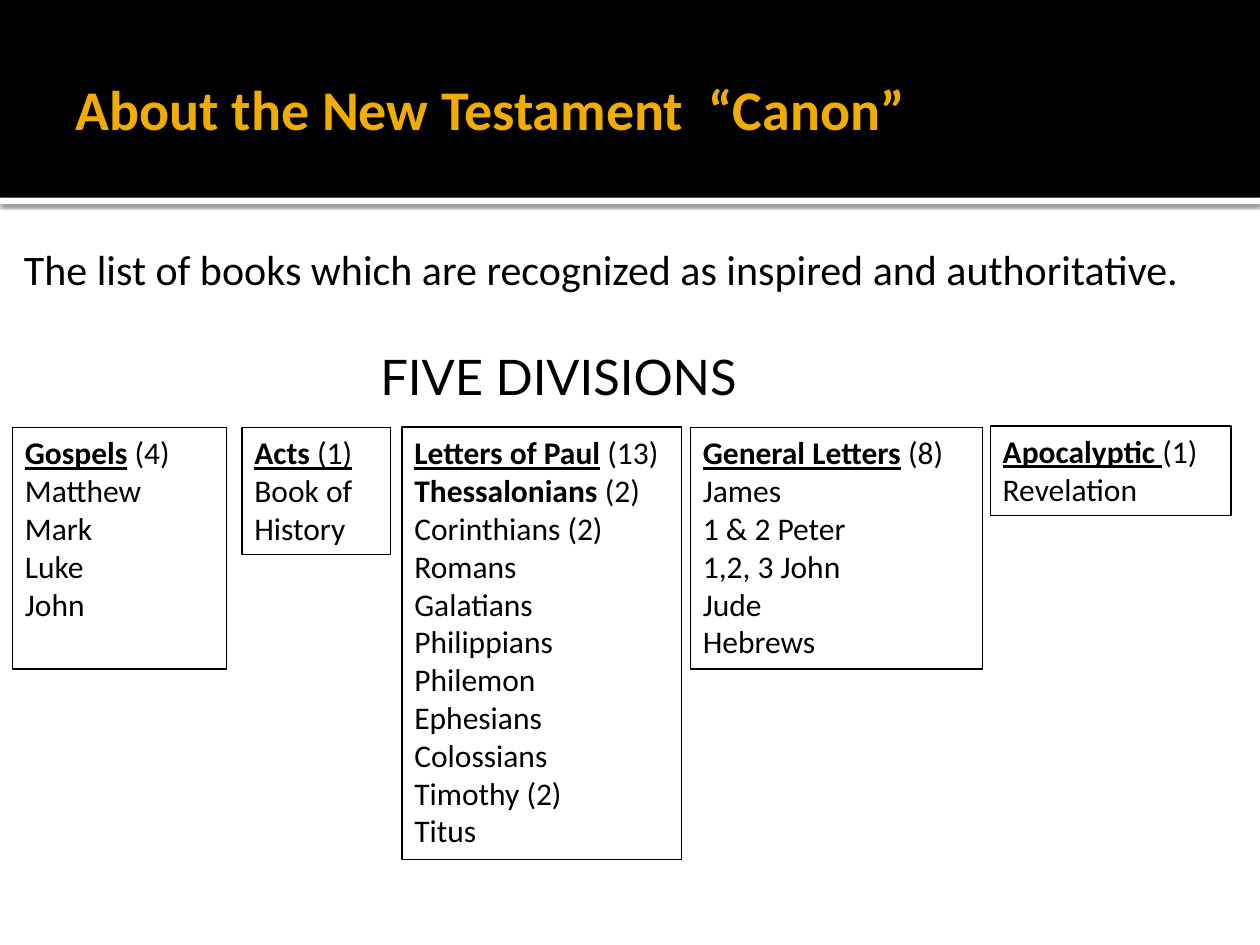
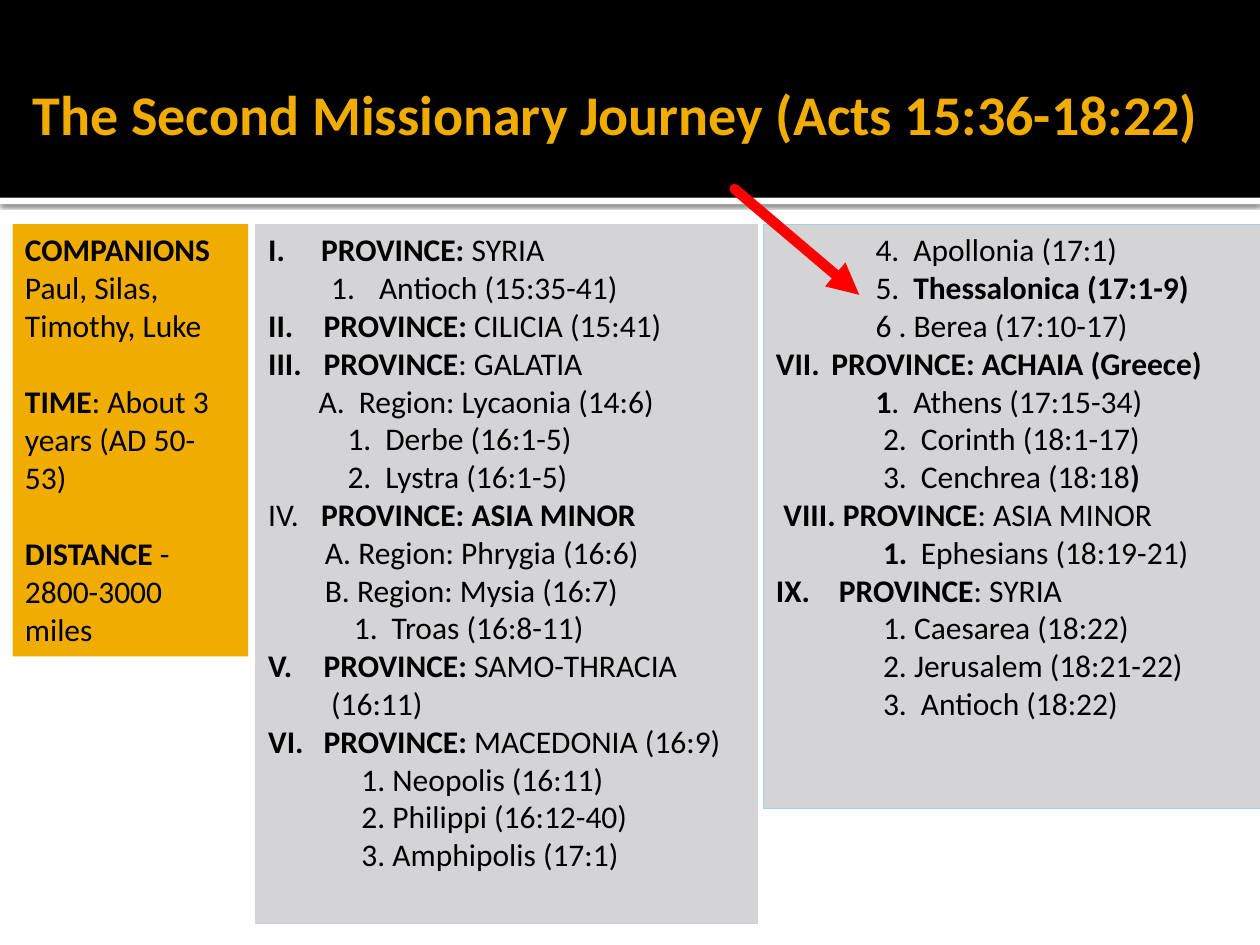
"""Builds two slides on the New Testament canon and the second missionary journey."""
from lxml import etree
from pptx import Presentation
from pptx.dml.color import RGBColor
from pptx.enum import shapes, text
from pptx.oxml import ns
from pptx.util import Inches, Pt

BLACK = RGBColor(0x00, 0x00, 0x00)
WHITE = RGBColor(0xFF, 0xFF, 0xFF)
GOLD = RGBColor(0xF0, 0xAD, 0x00)
GRAY = RGBColor(0xD4, 0xD4, 0xD6)
PALE_BLUE = RGBColor(0xA0, 0xD3, 0xE0)
RED = RGBColor(0xFF, 0x00, 0x00)
FONT = "Calibri"

# In all wording, * switches bold and _ switches underline.
CANON_TITLE = "About the New Testament  “Canon”"
CANON_INTRO = "The list of books which are recognized as inspired and authoritative."
DIVISIONS_HEADING = "FIVE DIVISIONS"
DIVISIONS = [
    ((0.1, 3.39, 1.7, 1.92), ["*_Gospels*_ (4)", "Matthew", "Mark", "Luke", "John"]),
    ((1.92, 3.39, 1.18, 1.01), ["*_Acts *(1)_", "Book of History"]),
    ((3.19, 3.39, 2.22, 3.43), [
        "*_Letters of Paul*_ (13)", "*Thessalonians *(2)", "Corinthians (2)",
        "Romans", "Galatians", "Philippians", "Philemon", "Ephesians",
        "Colossians", "Timothy (2)", "Titus"]),
    ((5.48, 3.39, 2.32, 1.92), [
        "*_General Letters*_ (8)", "James", "1 & 2 Peter", "1,2, 3 John",
        "Jude", "Hebrews"]),
    ((7.86, 3.38, 1.91, 0.71), ["*_Apocalyptic *_(1)", "Revelation"]),
]

JOURNEY_TITLE = "The Second Missionary Journey (Acts 15:36-18:22)"
FACTS = [
    "*COMPANIONS *Paul, Silas, Timothy, Luke",
    "*TIME*: About 3 years (AD 50-53)",
    "*DISTANCE* - 2800-3000 miles",
]
ROMAN, ARABIC = "romanUcPeriod", "arabicPeriod"
# Each stop: label indent, text indent, wording, optional (number style, start).
EARLY_STOPS = [
    (0, 0.42, "*I.\tPROVINCE: *SYRIA"),
    (0.5, 0.88, "Antioch (15:35-41)", (ARABIC, 1)),
    (0, 0.44, "*PROVINCE: *CILICIA (15:41)", (ROMAN, 2)),
    (0, 0.44, "*PROVINCE*: GALATIA", (ROMAN, 3)),
    (0.4, 0.72, "A.\tRegion: Lycaonia (14:6)"),
    (0.63, 0.93, "1.\tDerbe (16:1-5)"),
    (0.63, 0.93, "2.\tLystra (16:1-5)"),
    (0, 0.42, "IV.\t*PROVINCE: ASIA MINOR*"),
    (0.45, 0.45, "A. Region: Phrygia (16:6)"),
    (0.45, 0.45, "B. Region: Mysia (16:7)"),
    (0.68, 0.98, "1.\tTroas (16:8-11)"),
    (0, 0.44, "*PROVINCE: *SAMO-THRACIA", (ROMAN, 5)),
    (0.5, 0.5, "(16:11)"),
    (0, 0.44, "*PROVINCE:* MACEDONIA (16:9)", (ROMAN, 6)),
    (0.74, 0.74, "1. Neopolis (16:11)"),
    (0.74, 0.74, "2. Philippi (16:12-40)"),
    (0.74, 0.74, "3. Amphipolis (17:1)"),
]
LATE_STOPS = [
    (0.79, 1.09, "4.\tApollonia (17:1)"),
    (0.79, 1.09, "5.\t*Thessalonica (17:1-9)*"),
    (0.79, 0.79, "6 . Berea (17:10-17)"),
    (0, 0.44, "*PROVINCE: ACHAIA (Greece)*", (ROMAN, 7)),
    (0.79, 1.09, "*1*.\tAthens (17:15-34)"),
    (0.85, 1.15, "2.\tCorinth (18:1-17)"),
    (0.85, 1.15, "3.\tCenchrea (18:18*)*"),
    (0.06, 0.06, "*VIII. PROVINCE*: ASIA MINOR"),
    (0.85, 1.15, "*1.*\tEphesians (18:19-21)"),
    (0, 0.5, "*IX.\tPROVINCE*: SYRIA"),
    (0.85, 0.85, "1. Caesarea (18:22)"),
    (0.85, 0.85, "2. Jerusalem (18:21-22)"),
    (0.85, 1.15, "3.\tAntioch (18:22)"),
]
JOURNEY_PANELS = [
    ((6.06, 1.78, 3.95, 4.64), PALE_BLUE, LATE_STOPS),
    ((2.03, 1.78, 3.98, 5.55), GRAY, EARLY_STOPS),
]


def add_run(paragraph, wording, size, color, font=FONT, bold=False, underline=False):
    run = paragraph.add_run()
    run.text = wording
    run.font.name, run.font.size = font, Pt(size)
    run.font.bold, run.font.underline = bold, underline
    run.font.color.rgb = color


def add_marked_runs(paragraph, wording, size=18, color=BLACK):
    bold = underline = False
    for bold_index, bold_part in enumerate(wording.split("*")):
        bold = bold_index % 2 == 1
        for index, part in enumerate(bold_part.split("_")):
            if index:
                underline = not underline
            if part:
                add_run(paragraph, part, size, color, bold=bold, underline=underline)


def place(shape, box):
    shape.left, shape.top, shape.width, shape.height = map(Inches, box)


def set_indent(paragraph, label, wording_left, numbering=None):
    properties = paragraph._p.get_or_add_pPr()
    properties.set("marL", str(Inches(wording_left)))
    properties.set("indent", str(Inches(label - wording_left)))
    if numbering:
        style, start = numbering
        bullet = etree.SubElement(properties, ns.qn("a:buAutoNum"))
        bullet.set("type", style)
        bullet.set("startAt", str(start))
    else:
        etree.SubElement(properties, ns.qn("a:buNone"))


def add_box(parent, box, fill=None, line=None):
    shape = parent.add_shape(shapes.MSO_SHAPE.RECTANGLE, *map(Inches, box))
    shape.shadow.inherit = False
    if fill is None:
        shape.fill.background()
    else:
        shape.fill.solid()
        shape.fill.fore_color.rgb = fill
    if line is None:
        shape.line.fill.background()
    else:
        shape.line.color.rgb = line
        shape.line.width = Pt(0.75)
    shape.text_frame.word_wrap = True
    shape.text_frame.vertical_anchor = text.MSO_ANCHOR.TOP
    return shape


def next_paragraph(frame, index):
    paragraph = frame.add_paragraph() if index else frame.paragraphs[0]
    paragraph.alignment = text.PP_ALIGN.LEFT
    return paragraph


def fill_lines(frame, lines, gap=0):
    for index, wording in enumerate(lines):
        paragraph = next_paragraph(frame, index)
        paragraph.space_before = Pt(gap if index else 0)
        add_marked_runs(paragraph, wording)


def fill_stops(frame, stops):
    for index, (label, wording_left, wording, *numbering) in enumerate(stops):
        paragraph = next_paragraph(frame, index)
        set_indent(paragraph, label, wording_left, *numbering)
        add_marked_runs(paragraph, wording)


def add_shared_bands(presentation, slide):
    """Draws the header bands and moves them behind everything on the master."""
    strip = add_box(slide.shapes, (0, 1.57, 10, 0.05), WHITE)
    header = add_box(slide.shapes, (0, 0, 10, 1.57), BLACK)
    effects = strip._element.spPr.find(ns.qn("a:effectLst"))
    shadow = etree.SubElement(effects, ns.qn("a:outerShdw"), blurRad=str(Pt(2.5)),
                              dist=str(Pt(0.8)), dir="5400000", rotWithShape="0")
    color = etree.SubElement(shadow, ns.qn("a:srgbClr"), val=str(BLACK))
    etree.SubElement(color, ns.qn("a:alpha"), val="60000")
    tree = presentation.slide_master.shapes._spTree
    for position, band in enumerate((strip, header), start=2):
        tree.insert(position, band._element)


def set_title(slide, wording, box):
    title = slide.shapes.title
    place(title, box)
    frame = title.text_frame
    frame.margin_left, frame.margin_right = Inches(0.1), Inches(0.05)
    frame.vertical_anchor = text.MSO_ANCHOR.MIDDLE
    frame.auto_size = text.MSO_AUTO_SIZE.NONE
    add_run(next_paragraph(frame, 0), wording, 32, GOLD, bold=True)


def build_canon(slide):
    set_title(slide, CANON_TITLE, (0.5, 0.17, 9, 1.37))
    body = slide.placeholders[1]
    place(body, (0, 1.83, 10, 5.58))
    frame = body.text_frame
    frame.margin_left, frame.margin_top = Inches(0.06), Inches(0.1)
    frame.auto_size = text.MSO_AUTO_SIZE.NONE
    paragraph = next_paragraph(frame, 0)
    paragraph.space_before = Pt(0)
    set_indent(paragraph, 0.13, 0.13)
    add_run(paragraph, CANON_INTRO, 24, BLACK)

    for box, lines in DIVISIONS:
        fill_lines(add_box(slide.shapes, box, line=BLACK).text_frame, lines)

    heading = slide.shapes.add_textbox(*map(Inches, (2.92, 2.7, 3.09, 0.57)))
    heading.text_frame.word_wrap = True
    add_run(next_paragraph(heading.text_frame, 0), DIVISIONS_HEADING, 28, BLACK, "Lato")


def build_journey(slide):
    set_title(slide, JOURNEY_TITLE, (0.16, 0.02, 9.68, 1.76))
    facts = add_box(slide.shapes, (0.1, 1.78, 1.87, 3.43), GOLD)
    fill_lines(facts.text_frame, FACTS, gap=22)
    for box, line, stops in JOURNEY_PANELS:
        fill_stops(add_box(slide.shapes, box, GRAY, line).text_frame, stops)

    arrow = slide.shapes.add_connector(
        shapes.MSO_CONNECTOR.STRAIGHT, *map(Inches, (5.83, 1.5, 6.82, 2.34)))
    arrow.line.color.rgb = RED
    arrow.line.width = Pt(6)
    outline = arrow.line._get_or_add_ln()
    outline.set("cap", "rnd")
    etree.SubElement(outline, ns.qn("a:tailEnd"), type="triangle")
    etree.SubElement(arrow._element.spPr, ns.qn("a:effectLst"))


def main():
    presentation = Presentation()
    presentation.slide_width, presentation.slide_height = Inches(10), Inches(7.5)
    canon = presentation.slides.add_slide(presentation.slide_layouts[1])
    add_shared_bands(presentation, canon)
    build_canon(canon)
    build_journey(presentation.slides.add_slide(presentation.slide_layouts[5]))
    presentation.save("out.pptx")


if __name__ == "__main__":
    main()
